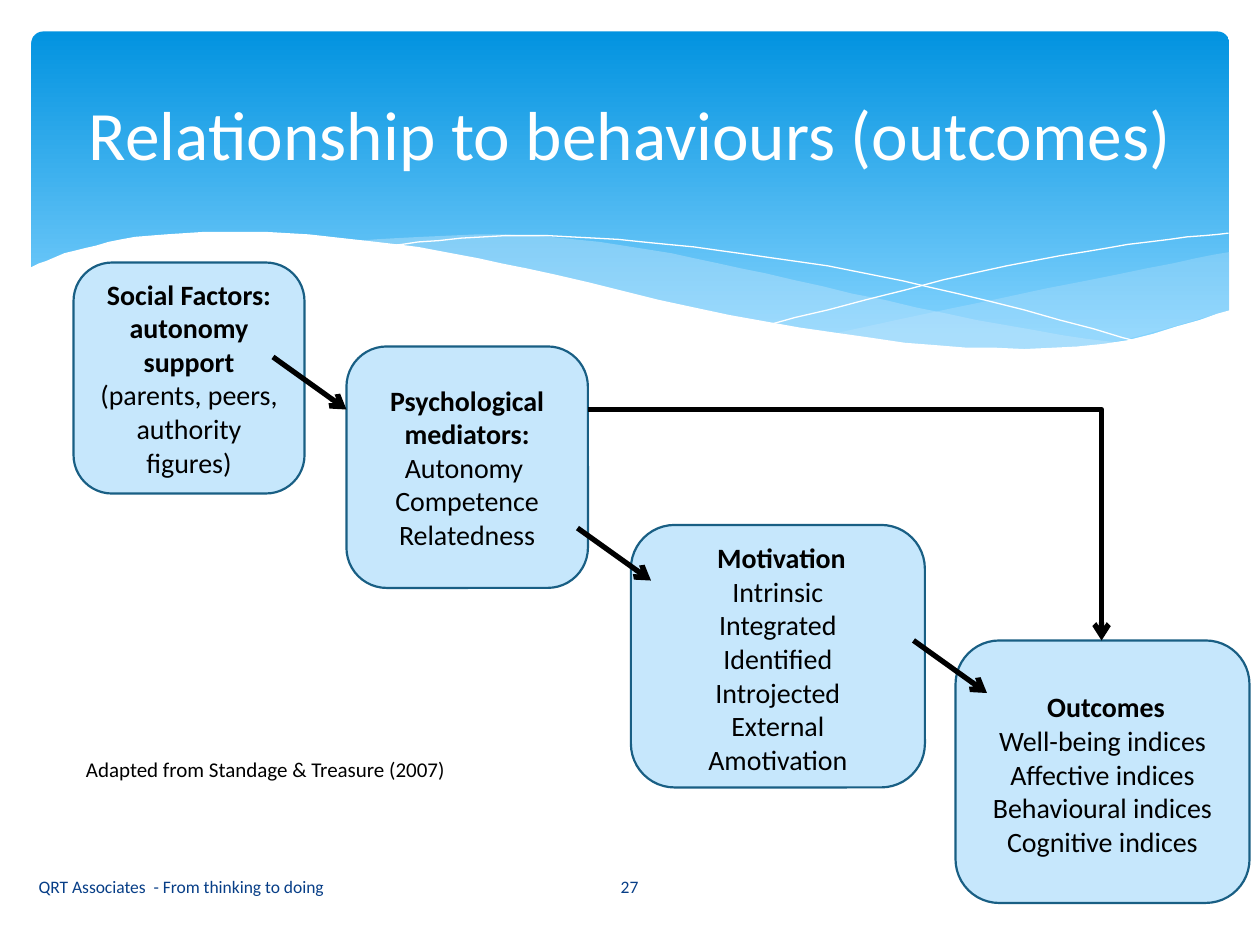
from lxml import etree
from pptx import Presentation
from pptx import util as u
from pptx.dml import color
from pptx.enum import shapes, text
from pptx.oxml import ns

Pt = u.Pt
COLORS = {"sky": "0293E0", "pale": "83D3FE", "box": "C6E7FC", "edge": "195F84",
          "white": "FFFFFF", "black": "000000", "footer": "073E87"}
RGB = {name: color.RGBColor.from_string(value) for name, value in COLORS.items()}
CENTER, LEFT = text.PP_ALIGN.CENTER, text.PP_ALIGN.LEFT
MIDDLE, TOP = text.MSO_ANCHOR.MIDDLE, text.MSO_ANCHOR.TOP

deck = Presentation()
deck.slide_width, deck.slide_height = Pt(720), Pt(540)
page = deck.slides.add_slide(deck.slide_layouts[6])


def write(box, paragraphs, align, ink, frame_format):
    for name, value in frame_format.items():
        setattr(box.text_frame, name, value)
    for index, spans in enumerate(paragraphs):
        para = box.text_frame.paragraphs[0] if index == 0 else box.text_frame.add_paragraph()
        para.alignment = align
        for words, size, bold in spans:
            span = para.add_run()
            span.text = words
            span.font.color.rgb = RGB[ink]
            for name, value in {"name": "Calibri", "size": Pt(size), "bold": bold}.items():
                setattr(span.font, name, value)


def add_arrow(kind, start_x, start_y, end_x, end_y):
    arrow = page.shapes.add_connector(kind, Pt(start_x), Pt(start_y), Pt(end_x), Pt(end_y))
    arrow.line.color.rgb = RGB["black"]
    arrow.line.width = Pt(3)
    etree.SubElement(arrow.line._get_or_add_ln(), ns.qn("a:tailEnd"), type="arrow")
    etree.SubElement(arrow._element.spPr, ns.qn("a:effectLst"))
    return arrow


banner = page.shapes.add_shape(shapes.MSO_SHAPE.ROUNDED_RECTANGLE, Pt(18), Pt(18), Pt(684.5), Pt(194.5))
banner.adjustments[0] = 0.034
banner.shadow.inherit = False
banner.line.fill.background()
banner.fill.gradient()
banner.fill.gradient_angle = 270
for stop, name, position in zip(banner.fill.gradient_stops, ("sky", "pale"), (0, 0.9)):
    stop.color.rgb = RGB[name]
    stop.position = position

STEPS = 6
WAVES = [
    ("box", 29, [[(976, 200), (861, 223), (661, 265)],
                 [(661, 265), (769, 277), (863, 275), (976, 247)]]),
    ("box", 40, [[(893, 273), (775, 254), (629, 222), (514, 198), (399, 186), (286, 191)],
                 [(286, 191), (404, 211), (566, 248), (722, 274), (828, 278), (893, 273)]]),
    (None, 100, [[(309, 195), (401, 187), (510, 192), (636, 208), (760, 233), (907, 272)]]),
    (None, 100, [[(613, 257), (776, 216), (895, 194), (975, 185)]]),
    ("white", 100, [[(977, 246), (875, 273), (744, 274), (579, 250), (418, 213),
                     (316, 194), (211, 184), (119, 187), (59, 199), (23, 213)],
                    [(23, 329), (977, 329)]]),
]
for fill, opacity, edges in WAVES:
    points = []
    for edge in edges:
        knots = [edge[0], *edge, edge[-1]]
        points.append(edge[0])
        for before, start, end, after in zip(knots, knots[1:], knots[2:], knots[3:]):
            for step in range(1, STEPS + 1):
                t = step / STEPS
                points.append([
                    b + (c - a) * t / 2 + (2 * a - 5 * b + 4 * c - d) * t**2 / 2
                    + (3 * b - a - 3 * c + d) * t**3 / 2
                    for a, b, c, d in zip(before, start, end, after)])
    outline = page.shapes.build_freeform(*points[0], scale=Pt(0.72))
    outline.add_line_segments(points[1:], close=fill is not None)
    wave = outline.convert_to_shape()
    wave.shadow.inherit = False
    if fill:
        wave.line.fill.background()
        wave.fill.solid()
        wave.fill.fore_color.rgb = RGB[fill]
        if opacity < 100:
            tint = wave._element.spPr.find(".//" + ns.qn("a:srgbClr"))
            etree.SubElement(tint, ns.qn("a:alpha"), val=str(opacity * 1000))
    else:
        wave.fill.background()
        wave.line.color.rgb = RGB["white"]
        wave.line.width = Pt(0)

LABELS = [
    ("Relationship to behaviours (outcomes)", 39.6, "white", CENTER, MIDDLE, True, (36, 26.5, 648, 98.5)),
    ("Adapted from Standage & Treasure (2007)", 12, "black", LEFT, TOP, False, (42, 428.5, 231, 21.5)),
    ("27", 10, "footer", CENTER, MIDDLE, True, (314, 492.5, 91.5, 28.75)),
    ("QRT Associates  - From thinking to doing", 10, "footer", LEFT, MIDDLE, True, (15, 492.5, 298, 28.75)),
]
for words, size, ink, align, anchor, wrap, place in LABELS:
    label = page.shapes.add_textbox(*map(Pt, place))
    write(label, [[(words, size, False)]], align, ink, {"word_wrap": wrap, "vertical_anchor": anchor})

STAGES = [
    ((198, 198, 138, 138), [("Psychological mediators:", 16, True)],
     ["Autonomy ", "Competence", "Relatedness"]),
    ((360.5, 300, 168, 150), [(" ", 18, False), ("Motivation", 16, True)],
     ["Intrinsic", "Integrated", "Identified", "Introjected", "External", "Amotivation"]),
    ((42, 150, 132, 132), [("Social Factors: autonomy support ", 16, True),
                           ("(parents, peers, authority figures)", 16, False)], []),
    ((546, 366, 168, 150), [(" ", 18, False), ("Outcomes", 16, True)],
     ["Well-being indices", "Affective indices", "Behavioural indices", "Cognitive indices"]),
]
for place, heading, items in STAGES:
    stage = page.shapes.add_shape(shapes.MSO_SHAPE.ROUNDED_RECTANGLE, *map(Pt, place))
    stage.shadow.inherit = False
    stage.fill.solid()
    stage.fill.fore_color.rgb = RGB["box"]
    stage.line.color.rgb = RGB["edge"]
    stage.line.width = Pt(1.25)
    write(stage, [heading] + [[(item, 16, False)] for item in items], CENTER, "black",
          {"word_wrap": True, "vertical_anchor": MIDDLE})

for x, y in [(156, 204), (330, 301.75), (522, 366)]:
    add_arrow(shapes.MSO_CONNECTOR.STRAIGHT, x, y, x + 42, y + 30)
bypass = add_arrow(shapes.MSO_CONNECTOR.ELBOW, 336, 234, 629.5, 366)
bypass._element.spPr.find(ns.qn("a:prstGeom")).set("prst", "bentConnector2")

deck.save("out.pptx")
